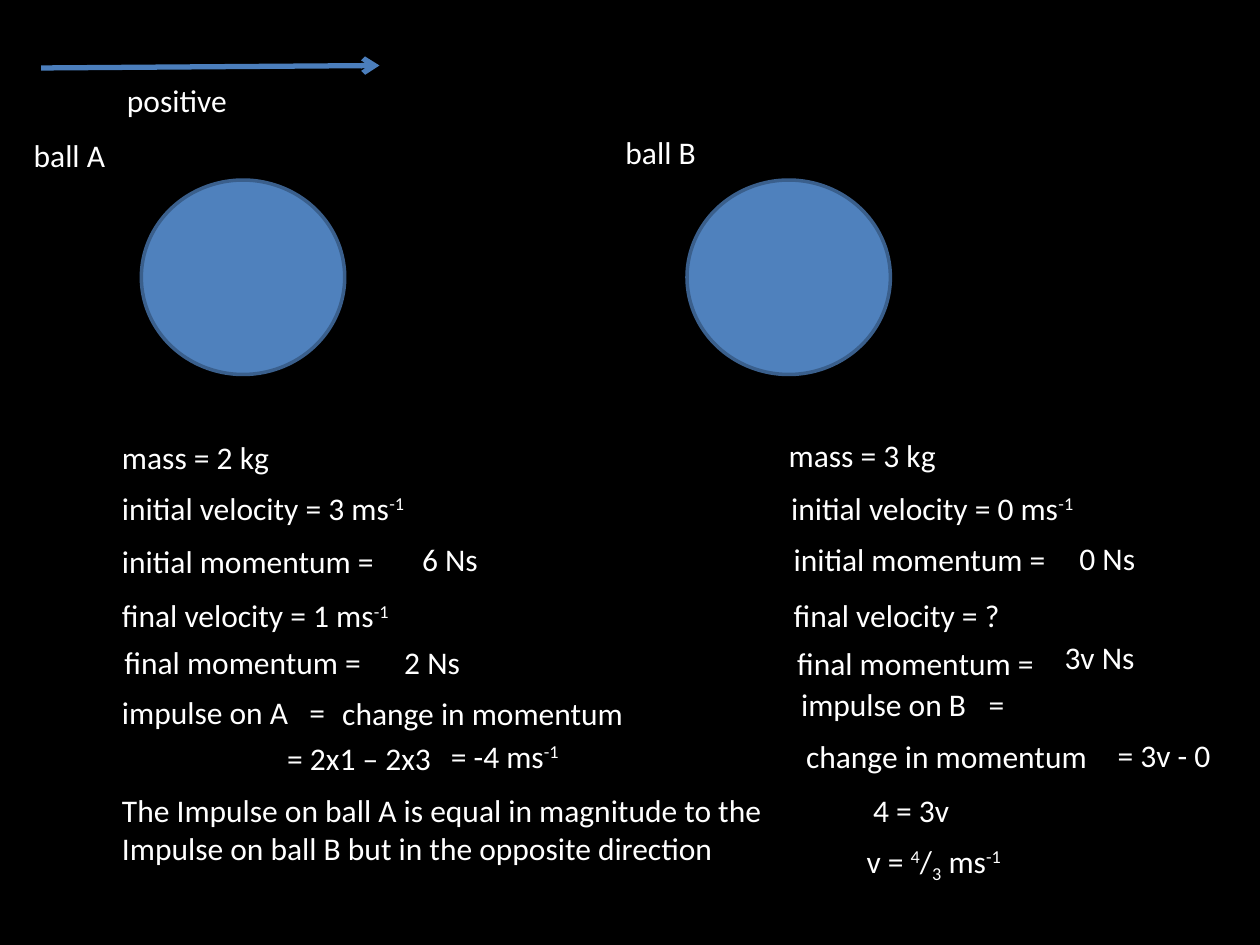
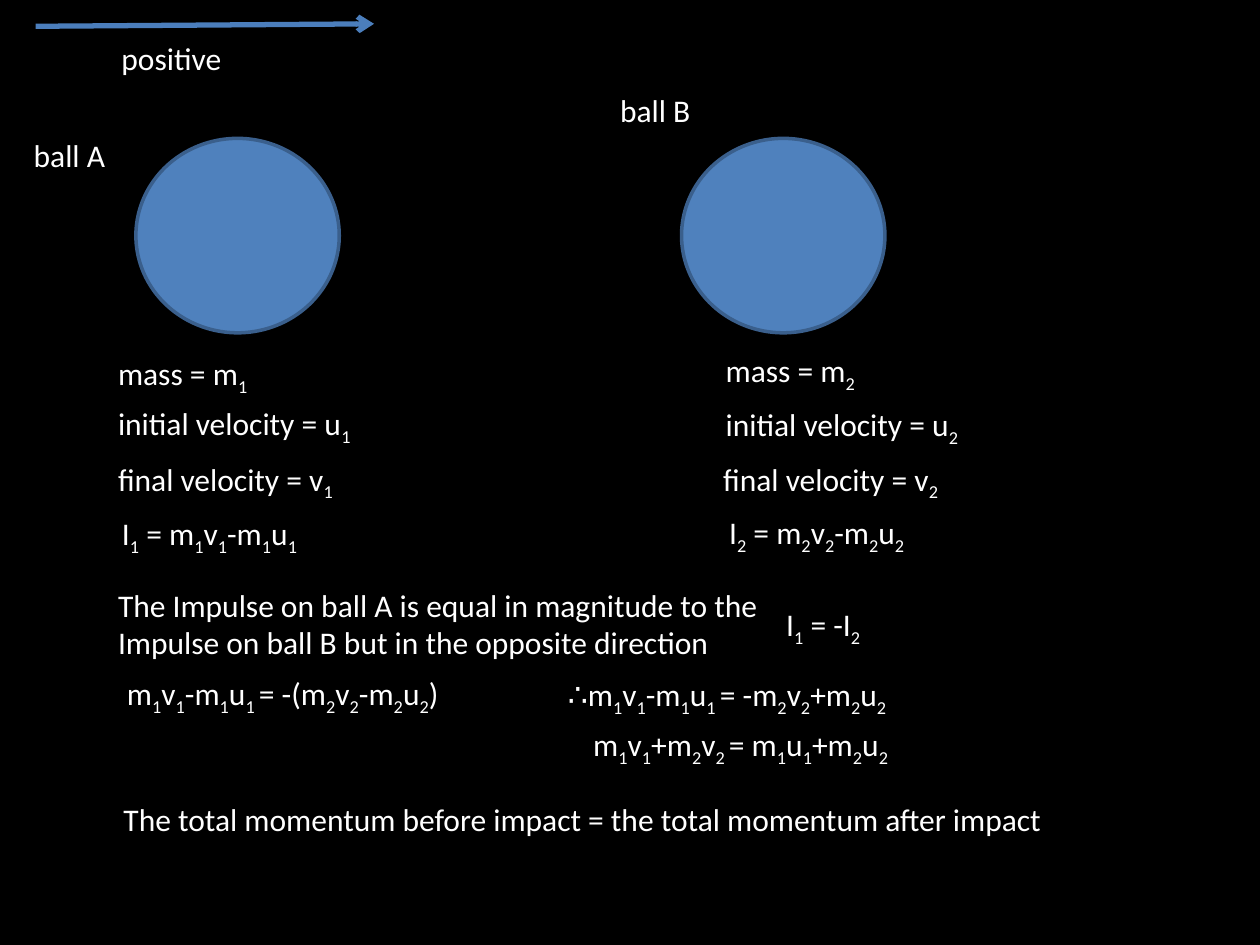
from dataclasses import dataclass

from lxml import etree
from pptx import Presentation
from pptx import util as u
from pptx.dml.color import RGBColor
from pptx.enum import shapes, text
from pptx.oxml import ns


@dataclass(frozen=True)
class Theme:
    background: RGBColor = RGBColor.from_string("000000")
    writing: RGBColor = RGBColor.from_string("FFFFFF")
    ball: RGBColor = RGBColor.from_string("4F81BD")
    ball_edge: RGBColor = RGBColor.from_string("3A5F8C")
    arrow: RGBColor = RGBColor.from_string("4B7EBC")
    font: str = "Calibri"
    size: u.Pt = u.Pt(18)
    edge_width: u.Pt = u.Pt(2)
    arrow_width: u.Pt = u.Pt(3)


THEME = Theme()
LINE_HEIGHT, TWO_LINES = 1.02, 1.8
EQUALS_TAB = 3.78
BASELINES = {"^": "30000", "_": "-25000"}
EQUAL_IMPULSES = (
    "The Impulse on ball A is equal in magnitude to the "
    "Impulse on ball B but in the opposite direction"
)

ARROW_LENGTH, ARROW_RISE = 6.82, 0.05
BALL_SIZE = 4.1, 3.92
BALL_OFFSETS = (2.02, 2.26), (13.02, 2.26)
BALL_A_LABEL = (0.43, 2.62, 2.97, "ball A")
SCENE_LABELS = [
    (1.48, 0.13, 4.75, "positive"),
    (11.53, 1.19, 2.97, "ball B"),
]

# Each entry: left, top, width, wording, optional height
SLIDES = [
    {
        "origin": (0.83, 1.37),
        "working": [
            (2.21, 8.71, 4.75, "mass = 2 kg"),
            (2.21, 9.73, 8.23, "initial velocity = 3 ms^{-1}"),
            (2.21, 10.8, 8.56, "initial momentum ="),
            (8.26, 10.77, 2.16, "6 Ns"),
            (2.21, 11.89, 7.04, "final velocity = 1 ms^{-1}"),
            (2.26, 12.83, 5.87, "final momentum ="),
            (7.9, 12.83, 2.16, "2 Ns"),
            (2.21, 13.84, 5.08, "impulse on A\t="),
            (6.65, 13.87, 7.06, "change in momentum"),
            (5.54, 14.78, 3.51, "= 2x1 – 2x3"),
            (8.84, 14.73, 3.66, "= -4 ms^{-1}"),
            (2.21, 15.82, 13.54, EQUAL_IMPULSES, TWO_LINES),
            (15.65, 8.66, 4.75, "mass = 3 kg"),
            (15.7, 9.73, 7.92, "initial velocity = 0 ms^{-1}"),
            (15.75, 10.77, 5.92, "initial momentum ="),
            (21.51, 10.74, 2.16, "0 Ns"),
            (15.75, 11.89, 7.04, "final velocity = ?"),
            (15.82, 12.85, 5.87, "final momentum ="),
            (21.21, 12.73, 2.16, "3v Ns"),
            (15.9, 13.69, 5.08, "impulse on B\t="),
            (16, 14.73, 6.6, "change in momentum"),
            (22.28, 14.71, 2.64, "= 3v - 0", TWO_LINES),
            (17.35, 15.82, 9.91, "4 = 3v"),
            (17.22, 16.84, 9.91, "v = ^{4}/_{3} ms^{-1}"),
        ],
    },
    {
        "origin": (0.72, 0.53),
        "working": [
            (2.13, 7.01, 4.75, "mass = m_{1}"),
            (2.13, 8.03, 8.23, "initial velocity = u_{1}"),
            (2.13, 9.14, 7.04, "final velocity = v_{1}"),
            (2.21, 10.24, 7.04, "I_{1} = m_{1}v_{1}-m_{1}u_{1}"),
            (14.38, 6.96, 4.75, "mass = m_{2}"),
            (14.38, 8.05, 7.92, "initial velocity = u_{2}"),
            (14.33, 9.14, 7.04, "final velocity = v_{2}"),
            (14.45, 10.21, 7.04, "I_{2} = m_{2}v_{2}-m_{2}u_{2}"),
            (2.13, 11.68, 14.02, EQUAL_IMPULSES, TWO_LINES),
            (15.6, 12.07, 7.04, "I_{1} = -I_{2}"),
            (2.31, 13.46, 8.05, "m_{1}v_{1}-m_{1}u_{1 }= -(m_{2}v_{2}-m_{2}u_{2})"),
            (11.2, 13.49, 8.05, "∴m_{1}v_{1}-m_{1}u_{1 }= -m_{2}v_{2}+m_{2}u_{2}"),
            (11.71, 14.5, 7.04, "m_{1}v_{1}+m_{2}v_{2 }= m_{1}u_{1}+m_{2}u_{2}"),
            (2.24, 16, 20.98, "The total momentum before impact = the total momentum after impact"),
        ],
    },
]


def add_run(paragraph, wording, baseline=None):
    if wording:
        run = paragraph.add_run()
        run.text = wording
        if baseline:
            run.font._element.set("baseline", baseline)


def write_formula(paragraph, wording):
    for piece in wording.split("}"):
        plain, brace, script = piece.partition("{")
        if brace:
            add_run(paragraph, plain[:-1])
            add_run(paragraph, script, BASELINES[plain[-1]])
        else:
            add_run(paragraph, plain)


def add_tab_stop(paragraph, position):
    properties = paragraph._p.get_or_add_pPr()
    stops = etree.SubElement(properties, ns.qn("a:tabLst"))
    etree.SubElement(stops, ns.qn("a:tab"), pos=str(u.Cm(position)), algn="l")


def add_text(slide, left, top, width, wording, height=LINE_HEIGHT):
    box = slide.shapes.add_textbox(u.Cm(left), u.Cm(top), u.Cm(width), u.Cm(height))
    frame = box.text_frame
    frame.word_wrap = True
    frame.auto_size = text.MSO_AUTO_SIZE.SHAPE_TO_FIT_TEXT
    paragraph = frame.paragraphs[0]
    paragraph.font.name = THEME.font
    paragraph.font.size = THEME.size
    paragraph.font.color.rgb = THEME.writing
    if "\t" in wording:
        add_tab_stop(paragraph, EQUALS_TAB)
    write_formula(paragraph, wording)


def add_ball(slide, left, top):
    ball = slide.shapes.add_shape(
        shapes.MSO_SHAPE.OVAL, u.Cm(left), u.Cm(top), *map(u.Cm, BALL_SIZE)
    )
    ball.shadow.inherit = False
    ball.fill.solid()
    ball.fill.fore_color.rgb = THEME.ball
    ball.line.color.rgb = THEME.ball_edge
    ball.line.width = THEME.edge_width


def add_direction_arrow(slide, left, top):
    arrow = slide.shapes.add_connector(
        shapes.MSO_CONNECTOR.STRAIGHT,
        u.Cm(left), u.Cm(top), u.Cm(left + ARROW_LENGTH), u.Cm(top - ARROW_RISE),
    )
    arrow.line.color.rgb = THEME.arrow
    arrow.line.width = THEME.arrow_width
    etree.SubElement(arrow.line._get_or_add_ln(), ns.qn("a:tailEnd"), type="arrow")
    etree.SubElement(arrow._element.spPr, ns.qn("a:effectLst"))


def add_scene(slide, left, top):
    for across, down in BALL_OFFSETS:
        add_ball(slide, left + across, top + down)
    add_direction_arrow(slide, left, top)
    for across, down, width, wording in SCENE_LABELS:
        add_text(slide, left + across, top + down, width, wording)
    add_text(slide, *BALL_A_LABEL)


def main():
    presentation = Presentation()
    presentation.slide_width = u.Cm(25.4)
    presentation.slide_height = u.Cm(19.05)
    background = presentation.slide_master.background.fill
    background.solid()
    background.fore_color.rgb = THEME.background
    for content in SLIDES:
        slide = presentation.slides.add_slide(presentation.slide_layouts[6])
        add_scene(slide, *content["origin"])
        for entry in content["working"]:
            add_text(slide, *entry)
    presentation.save("out.pptx")


if __name__ == "__main__":
    main()
